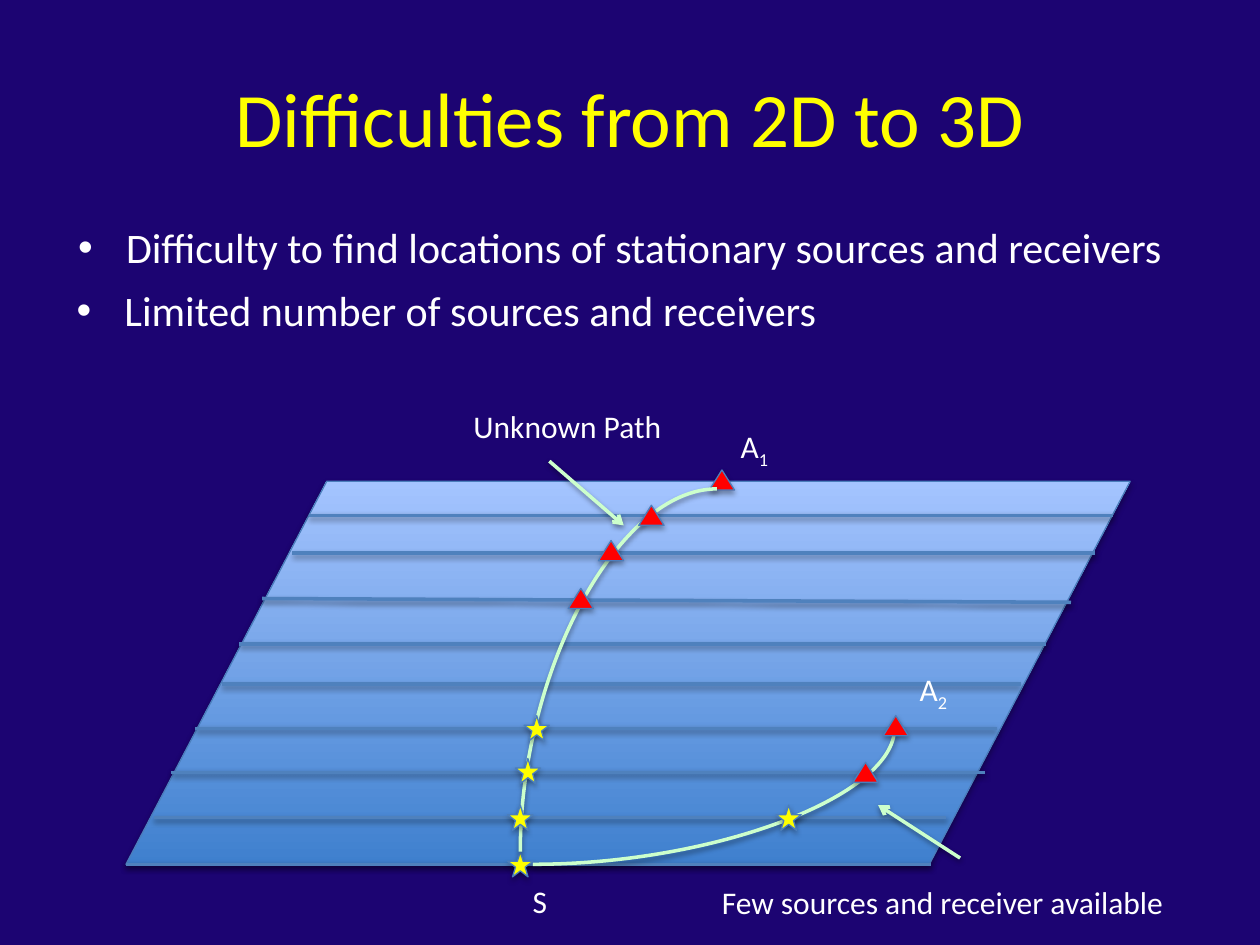
import pptx
import pptx.dml.color
import pptx.enum.dml
import pptx.enum.shapes
import pptx.enum.text
import pptx.oxml
import pptx.oxml.ns
import pptx.util
from pptx.util import Inches

SHAPE = pptx.enum.shapes.MSO_SHAPE
CONNECTOR = pptx.enum.shapes.MSO_CONNECTOR
FONT = "Calibri"
BACKGROUND, TITLE_COLOR, TEXT_COLOR = "1C0472", "FFFF00", "FFFFFF"
OUTLINE, LAYER_COLOR, PATH_COLOR = "4B7EBC", "4F81BD", "CCFFCC"
RECEIVER = (SHAPE.ISOSCELES_TRIANGLE, 0.2, 0.16, "FF0000")
SOURCE = (SHAPE.STAR_5_POINT, 0.2, 0.2, "FFFF00")

# Start and end of each line across the plane: x1, y1, x2, y2
LAYERS = [
    (2.45, 4.09, 8.83, 4.09), (2.32, 4.39, 8.69, 4.39), (2.08, 4.75, 8.5, 4.78),
    (1.9, 5.11, 8.3, 5.11), (1.76, 5.43, 8.1, 5.43), (1.55, 5.78, 7.91, 5.78),
    (1.36, 6.13, 7.82, 6.13), (1.22, 6.49, 7.51, 6.49), (1, 6.86, 7.39, 6.86),
]
PATH_ENDS = [(RECEIVER, 5.63, 3.73), (SOURCE, 4.03, 6.76)]
FIRST_PATH_MARKERS = [
    (SOURCE, 4.03, 6.39), (SOURCE, 4.09, 6.02), (SOURCE, 4.16, 5.68),
    (RECEIVER, 5.07, 4.01), (RECEIVER, 4.75, 4.29), (RECEIVER, 4.51, 4.67),
]
SECOND_PATH_MARKERS = [(RECEIVER, 7.01, 5.68), (RECEIVER, 6.77, 6.05), (SOURCE, 6.16, 6.39)]
# Text, subscript, left, top, width
LABELS = [
    ("S", "", 4.13, 6.95, 0.47),
    ("A", "1", 5.78, 3.34, 0.47),
    ("A", "2", 7.2, 5.27, 0.47),
    ("Unknown Path", "", 3.66, 3.18, 2.1),
    ("Few sources and receiver available", "", 5.63, 6.96, 4.08),
]


def rgb(color):
    return pptx.dml.color.RGBColor.from_string(color)


def place(shape, left, top, width, height):
    shape.left, shape.top = Inches(left), Inches(top)
    shape.width, shape.height = Inches(width), Inches(height)


def add_run(para, text, size, color):
    span = para.add_run()
    span.text = text
    span.font.name = FONT
    span.font.size = pptx.util.Pt(size)
    span.font.color.rgb = rgb(color)
    return span


def add_shadow(shape, distance, opacity):
    """Give the shape a soft black shadow straight below it."""
    properties = shape._element.spPr
    for effects in properties.findall(pptx.oxml.ns.qn("a:effectLst")):
        properties.remove(effects)
    properties.append(pptx.oxml.parse_xml(
        f'<a:effectLst {pptx.oxml.ns.nsdecls("a")}>'
        f'<a:outerShdw blurRad="{pptx.util.Pt(3.1)}" dist="{pptx.util.Pt(distance)}" '
        'dir="5400000" rotWithShape="0"><a:srgbClr val="000000">'
        f'<a:alpha val="{opacity * 1000}"/></a:srgbClr></a:outerShdw></a:effectLst>'))


def add_outlined_shape(slide, kind, left, top, width, height):
    shape = slide.shapes.add_shape(
        kind, Inches(left), Inches(top), Inches(width), Inches(height))
    shape.line.color.rgb = rgb(OUTLINE)
    shape.line.width = pptx.util.Pt(0.75)
    add_shadow(shape, 1.8, 35)
    return shape


def add_plane(slide):
    plane = add_outlined_shape(slide, SHAPE.FLOWCHART_DATA, 1, 3.82, 7.97, 3.04)
    plane.fill.gradient()
    plane.fill.gradient_angle = 90
    for stop, color, position in zip(plane.fill.gradient_stops, ("3F80CE", "A4C4FF"), (0, 1)):
        stop.color.rgb = rgb(color)
        stop.position = position


def add_markers(slide, markers):
    for (kind, width, height, color), left, top in markers:
        marker = add_outlined_shape(slide, kind, left, top, width, height)
        marker.fill.solid()
        marker.fill.fore_color.rgb = rgb(color)


def add_line(slide, ends, color, kind=CONNECTOR.STRAIGHT):
    line = slide.shapes.add_connector(kind, *(Inches(value) for value in ends))
    line.line.color.rgb = rgb(color)
    line.line.width = pptx.util.Pt(2)
    add_shadow(line, 1.6, 38)
    return line


def add_path(slide, ends):
    """Draw a quarter curve that leaves its start horizontally."""
    curve = add_line(slide, ends, PATH_COLOR, CONNECTOR.CURVE)
    curve._element.spPr.find(pptx.oxml.ns.qn("a:prstGeom")).set("prst", "curvedConnector2")


def add_arrow(slide, ends):
    arrow = add_line(slide, ends, PATH_COLOR)
    arrow.line._get_or_add_ln().append(pptx.oxml.parse_xml(
        f'<a:tailEnd {pptx.oxml.ns.nsdecls("a")} type="arrow"/>'))


def add_label(slide, text, subscript, left, top, width):
    box = slide.shapes.add_textbox(Inches(left), Inches(top), Inches(width), Inches(0.4))
    box.text_frame.word_wrap = True
    box.text_frame.auto_size = pptx.enum.text.MSO_AUTO_SIZE.SHAPE_TO_FIT_TEXT
    para = box.text_frame.paragraphs[0]
    add_run(para, text, 18, TEXT_COLOR)
    if subscript:
        span = add_run(para, subscript, 18, TEXT_COLOR)
        span._r.get_or_add_rPr().set("baseline", "-25000")


def fill_title(title, text):
    place(title, 0.5, 0.3, 9, 1.25)
    title.text_frame.vertical_anchor = pptx.enum.text.MSO_ANCHOR.MIDDLE
    para = title.text_frame.paragraphs[0]
    para.alignment = pptx.enum.text.PP_ALIGN.CENTER
    add_run(para, text, 44, TITLE_COLOR)


def fill_bullet(box, text, left, top):
    place(box, left, top, 9, 0.55)
    box.text_frame.word_wrap = True
    box.text_frame.auto_size = pptx.enum.text.MSO_AUTO_SIZE.NONE
    para = box.text_frame.paragraphs[0]
    para.space_before = pptx.util.Pt(4.8)
    properties = para._p.get_or_add_pPr()
    properties.set("marL", str(Inches(0.38)))
    properties.set("indent", str(Inches(-0.38)))
    for tag in ('buFont typeface="Arial"', 'buChar char="•"'):
        properties.append(pptx.oxml.parse_xml(f'<a:{tag} {pptx.oxml.ns.nsdecls("a")}/>'))
    add_run(para, text, 24, TEXT_COLOR)


def main():
    deck = pptx.Presentation()
    deck.slide_width, deck.slide_height = Inches(10), Inches(7.5)
    slide = deck.slides.add_slide(deck.slide_layouts[1])
    slide.background.fill.solid()
    slide.background.fill.fore_color.rgb = rgb(BACKGROUND)

    fill_title(slide.shapes.title, "Difficulties from 2D to 3D")
    fill_bullet(slide.placeholders[1],
                "Difficulty to find locations of stationary sources and receivers", 0.52, 1.71)

    add_plane(slide)
    for ends in LAYERS:
        add_line(slide, ends, LAYER_COLOR)
    add_markers(slide, PATH_ENDS)
    add_path(slide, (5.69, 3.88, 4.13, 6.76))
    add_markers(slide, FIRST_PATH_MARKERS)
    add_arrow(slide, (4.36, 3.66, 4.95, 4.17))
    add_path(slide, (4.23, 6.86, 7.1, 5.78))
    add_markers(slide, SECOND_PATH_MARKERS)
    add_arrow(slide, (7.62, 6.81, 6.97, 6.39))
    for label in LABELS:
        add_label(slide, *label)

    second_bullet = slide.shapes.add_textbox(0, 0, 0, 0)
    fill_bullet(second_bullet, "Limited number of sources and receivers", 0.51, 2.21)
    deck.save("out.pptx")


if __name__ == "__main__":
    main()
